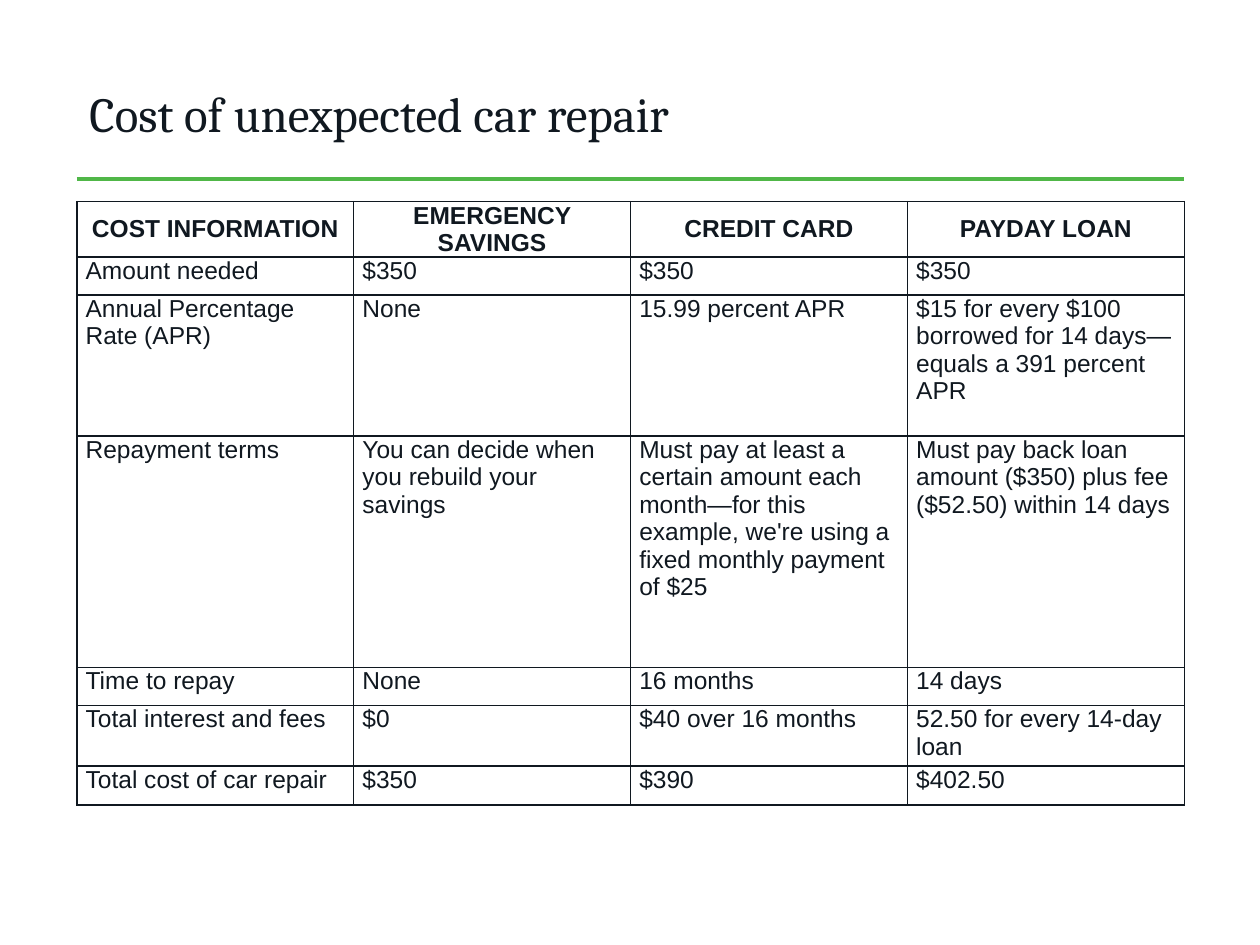
from lxml import etree
from pptx import Presentation
from pptx.dml.color import RGBColor
from pptx.enum.shapes import MSO_CONNECTOR
from pptx.enum.text import MSO_ANCHOR, PP_ALIGN
from pptx.oxml.ns import qn
from pptx.util import Inches, Pt

COLORS = {"ink": "101820", "rule": "50B748"}
LEFT, WIDTH = 0.61, 8.79

ROW_HEIGHTS = [0.44, 0.3, 1.12, 1.84, 0.3, 0.48, 0.31]
COSTS = [
    ["COST INFORMATION", "EMERGENCY SAVINGS", "CREDIT CARD", "PAYDAY LOAN"],
    ["Amount needed", "$350", "$350", "$350"],
    ["Annual Percentage Rate (APR)", "None", "15.99 percent APR",
     "$15 for every $100 borrowed for 14 days—equals a 391 percent APR"],
    ["Repayment terms", "You can decide when you rebuild your savings",
     "Must pay at least a certain amount each month—for this example, "
     "we're using a fixed monthly payment of $25",
     "Must pay back loan amount ($350) plus fee ($52.50) within 14 days"],
    ["Time to repay", "None", "16 months", "14 days"],
    ["Total interest and fees", "$0", "$40 over 16 months",
     "52.50 for every 14-day loan"],
    ["Total cost of car repair", "$350", "$390", "$402.50"],
]


def rgb(name):
    return RGBColor.from_string(COLORS[name])


def set_font(p, name, size, bold=False):
    p.font.name, p.font.size, p.font.bold = name, Pt(size), bold
    p.font.color.rgb = rgb("ink")


def add_title(s, text, x, y, w, h):
    title = s.shapes.title
    title.left, title.top, title.width, title.height = map(Inches, (x, y, w, h))
    tf = title.text_frame
    tf.text = text
    tf.vertical_anchor = MSO_ANCHOR.MIDDLE
    p = tf.paragraphs[0]
    p.alignment = PP_ALIGN.LEFT
    set_font(p, "Cambria", 28)


def add_rule(s, x, y, w):
    line = s.shapes.add_connector(
        MSO_CONNECTOR.STRAIGHT, Inches(x), Inches(y), Inches(x + w), Inches(y))
    line.line.color.rgb = rgb("rule")
    line.line.width = Pt(2)
    etree.SubElement(line._element.spPr, qn("a:effectLst"))


def set_borders(cell):
    tc_pr = cell._tc.get_or_add_tcPr()
    for i, side in enumerate(("lnL", "lnR", "lnT", "lnB")):
        # Borders must come before the cell's fill
        ln = etree.Element(qn(f"a:{side}"), w=str(Pt(1)))
        fill = etree.SubElement(ln, qn("a:solidFill"))
        etree.SubElement(fill, qn("a:srgbClr"), val=COLORS["ink"])
        tc_pr.insert(i, ln)


def fill_cell(cell, text, header):
    cell.text = text
    cell.fill.background()
    cell.margin_left = cell.margin_right = Inches(0.07)
    cell.margin_top = cell.margin_bottom = 0
    cell.vertical_anchor = MSO_ANCHOR.MIDDLE if header else MSO_ANCHOR.TOP
    p = cell.text_frame.paragraphs[0]
    p.alignment = PP_ALIGN.CENTER if header else PP_ALIGN.LEFT
    p.space_after = Pt(4 if header else 9)
    set_font(p, "Arial", 14, bold=header)
    set_borders(cell)


def add_cost_table(s, x, y, w):
    cols = len(COSTS[0])
    table = s.shapes.add_table(
        len(COSTS), cols, Inches(x), Inches(y), Inches(w),
        Inches(sum(ROW_HEIGHTS))).table
    table.horz_banding = False
    for col in table.columns:
        col.width = Inches(w / cols)
    for r, (height, texts) in enumerate(zip(ROW_HEIGHTS, COSTS)):
        table.rows[r].height = Inches(height)
        for c, text in enumerate(texts):
            fill_cell(table.cell(r, c), text, header=r == 0)


def main():
    prs = Presentation()
    prs.slide_width, prs.slide_height = Inches(10), Inches(7.5)
    s = prs.slides.add_slide(prs.slide_layouts[5])

    # Heading with its green rule
    add_rule(s, LEFT, 1.42, WIDTH)
    add_title(s, "Cost of unexpected car repair", LEFT, 0.49, WIDTH, 0.81)

    # Comparison of payment options
    add_cost_table(s, LEFT, 1.6, WIDTH)

    prs.save("out.pptx")


if __name__ == "__main__":
    main()
